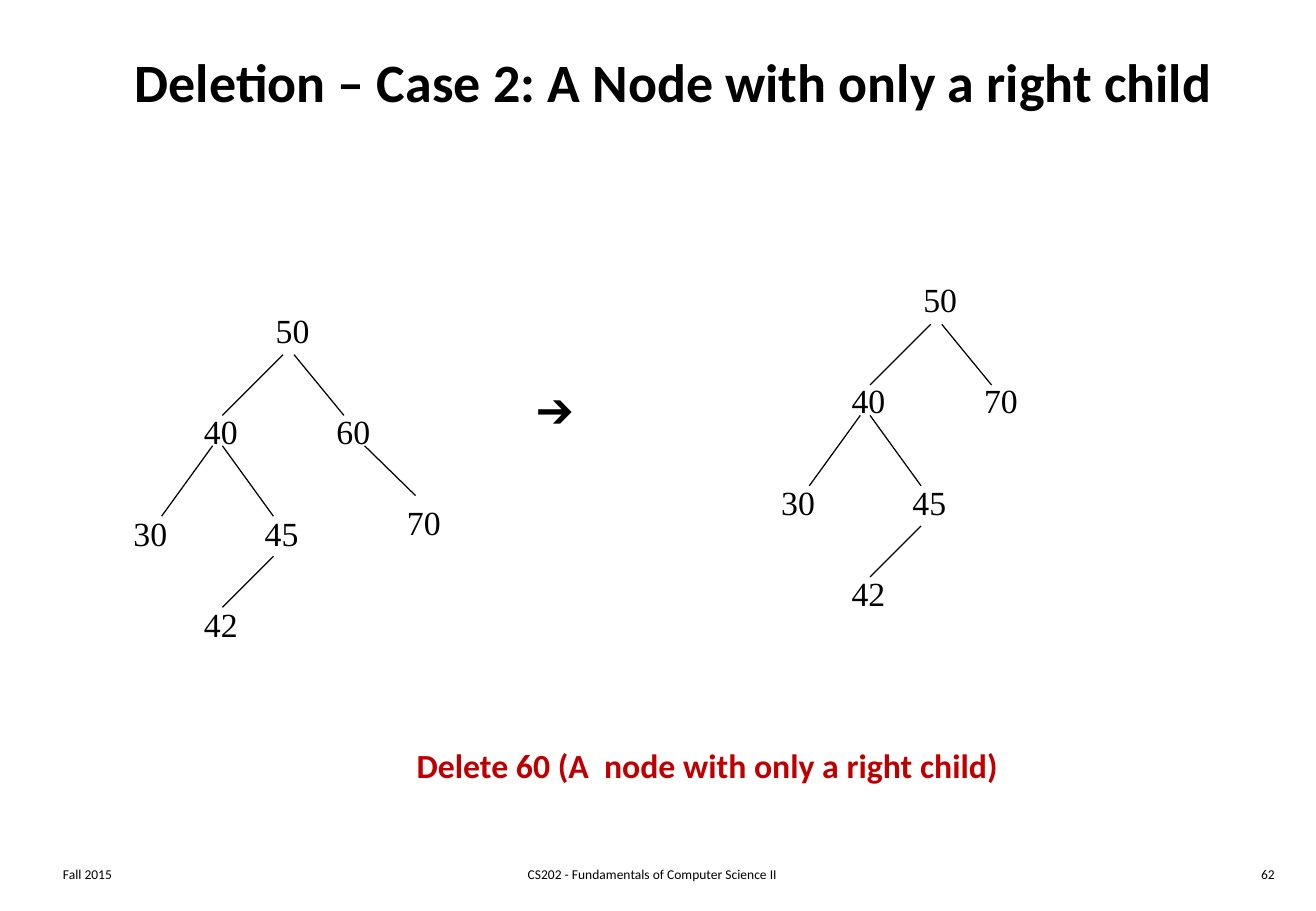
"""Build the slide on deleting a tree node that has only a right child."""
from dataclasses import dataclass

from lxml import etree
from pptx import Presentation
from pptx.dml.color import RGBColor
from pptx.enum import shapes, text
from pptx.oxml import ns
from pptx.util import Inches, Pt

LEFT, CENTER, RIGHT = text.PP_ALIGN.LEFT, text.PP_ALIGN.CENTER, text.PP_ALIGN.RIGHT


@dataclass(frozen=True)
class Theme:
    black: RGBColor = RGBColor(0, 0, 0)
    red: RGBColor = RGBColor(0xC0, 0, 0)
    sans: str = "Calibri"
    serif: str = "Times New Roman"
    title_size: int = 32
    arrow_size: int = 24
    body_size: int = 20
    footer_size: int = 8
    line_width: float = 0.75


THEME = Theme()


@dataclass(frozen=True)
class Label:
    wording: str
    left: float
    top: float
    width: float = 0.48
    height: float = 0.43
    size: int = THEME.body_size
    font: str = THEME.serif
    color: RGBColor = THEME.black
    bold: bool = False
    align: text.PP_ALIGN = LEFT
    anchor: text.MSO_ANCHOR = text.MSO_ANCHOR.TOP
    wrap: bool = False


@dataclass(frozen=True)
class Edge:
    start_x: float
    start_y: float
    end_x: float
    end_y: float


@dataclass(frozen=True)
class Tree:
    left: float
    top: float
    nodes: tuple[Label, ...]
    edges: tuple[Edge, ...]


SHARED_NODES = (
    Label("50", 1.17, 0),
    Label("40", 0.58, 0.83),
    Label("30", 0, 1.67),
    Label("45", 1.08, 1.67),
    Label("42", 0.58, 2.42),
)
SHARED_EDGES = (
    Edge(1.33, 0.42, 0.83, 0.92),
    Edge(1.42, 0.42, 1.83, 0.92),
    Edge(0.75, 1.17, 0.33, 1.75),
    Edge(0.83, 1.17, 1.25, 1.75),
    Edge(1.25, 2.08, 0.83, 2.5),
)
TREES = (
    Tree(1, 2.5, SHARED_NODES + (Label("60", 1.67, 0.83), Label("70", 2.25, 1.58)),
         SHARED_EDGES + (Edge(2, 1.17, 2.42, 1.58),)),
    Tree(6.33, 2.25, SHARED_NODES + (Label("70", 1.67, 0.83),), SHARED_EDGES),
)


def footer(wording: str, left: float, width: float, align: text.PP_ALIGN) -> Label:
    return Label(wording, left, 7.08, width, 0.25, THEME.footer_size, THEME.sans,
                 align=align, wrap=True)


LABELS = (
    footer("Fall 2015", 0.42, 2.26, LEFT),
    footer("CS202 - Fundamentals of Computer Science II", 3.34, 4.06, CENTER),
    footer("62", 8.33, 2.26, RIGHT),
    Label("Deletion – Case 2: A Node with only a right child", 0.42, 0.17, 10.25, 1,
          THEME.title_size, THEME.sans, bold=True, align=CENTER,
          anchor=text.MSO_ANCHOR.MIDDLE, wrap=True),
    Label("Delete 60 (A  node with only a right child)", 3.33, 6.08, 5.02, 0.44,
          font=THEME.sans, color=THEME.red, bold=True),
    Label("➔", 4.32, 3.13, 0.56, 0.5, THEME.arrow_size),
)


def draw_label(container, label: Label, left: float = 0, top: float = 0) -> None:
    shape = container.add_textbox(Inches(left + label.left), Inches(top + label.top),
                                  Inches(label.width), Inches(label.height))
    frame = shape.text_frame
    frame.word_wrap = label.wrap
    frame.vertical_anchor = label.anchor
    paragraph = frame.paragraphs[0]
    paragraph.alignment = label.align
    run = paragraph.add_run()
    run.text = label.wording
    run.font.name = label.font
    run.font.size = Pt(label.size)
    run.font.bold = label.bold
    run.font.color.rgb = label.color


def draw_edge(container, edge: Edge, left: float, top: float) -> None:
    connector = container.add_connector(
        shapes.MSO_CONNECTOR.STRAIGHT,
        Inches(left + edge.start_x), Inches(top + edge.start_y),
        Inches(left + edge.end_x), Inches(top + edge.end_y))
    connector.line.color.rgb = THEME.black
    connector.line.width = Pt(THEME.line_width)
    etree.SubElement(connector._element.spPr, ns.qn("a:effectLst"))


def draw_tree(slide, tree: Tree) -> None:
    group = slide.shapes.add_group_shape()
    for edge in tree.edges:
        draw_edge(group.shapes, edge, tree.left, tree.top)
    for node in tree.nodes:
        draw_label(group.shapes, node, tree.left, tree.top)


def main() -> None:
    presentation = Presentation()
    presentation.slide_width = Inches(10.83)
    presentation.slide_height = Inches(7.5)
    slide = presentation.slides.add_slide(presentation.slide_layouts[6])
    for label in LABELS:
        draw_label(slide.shapes, label)
    for tree in TREES:
        draw_tree(slide, tree)
    presentation.save("out.pptx")


if __name__ == "__main__":
    main()
